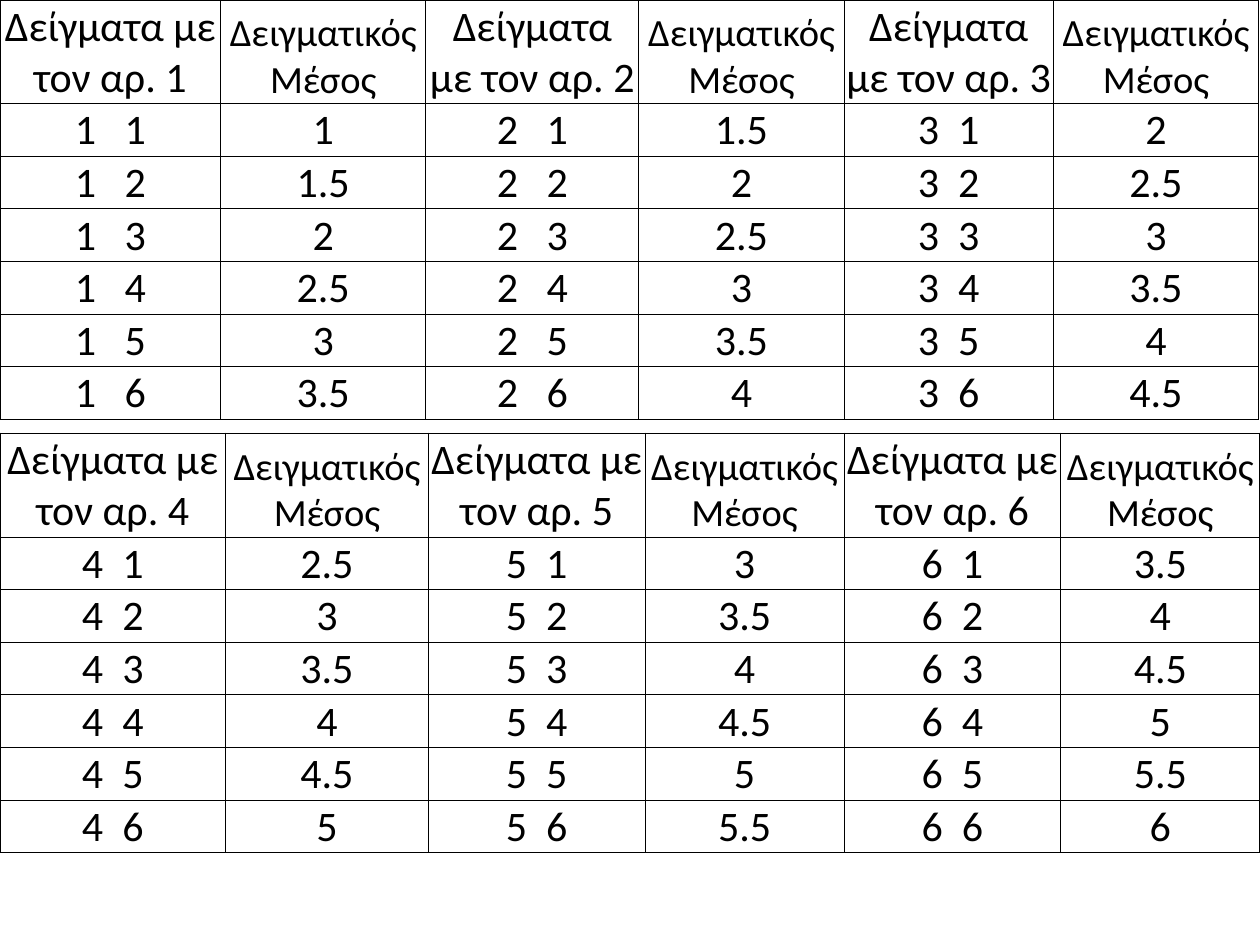
from lxml import etree
from pptx import Presentation
from pptx.dml.color import RGBColor
from pptx.enum import text
from pptx.oxml import ns
from pptx.util import Inches, Pt

FONT = "Calibri"
BLACK = "000000"
FACES = range(1, 7)
HEADER_HEIGHT, ROW_HEIGHT = 0.82, 0.41
THIN, THICK = 0.5, 1


def color(value):
    return RGBColor.from_string(value)


def set_borders(cell, widths):
    """Draw the cell's borders; widths maps L, R, T and B to points."""
    properties = cell._tc.get_or_add_tcPr()
    for side in "LRTB":
        line = etree.SubElement(properties, ns.qn(f"a:ln{side}"), w=str(Pt(widths[side])))
        fill = etree.SubElement(line, ns.qn("a:solidFill"))
        etree.SubElement(fill, ns.qn("a:srgbClr"), val=BLACK)


def fill_cell(cell, content, size):
    cell.margin_left = cell.margin_right = cell.margin_top = Inches(0.01)
    cell.margin_bottom = 0
    cell.vertical_anchor = text.MSO_ANCHOR.BOTTOM
    cell.text_frame.text = content
    para = cell.text_frame.paragraphs[0]
    para.alignment = text.PP_ALIGN.CENTER
    font = para.runs[0].font
    font.name, font.size = FONT, Pt(size)
    font.color.rgb = color(BLACK)


def sample_rows(first_draws):
    """Return the header and one row per second draw, with each sample's mean."""
    header = []
    for first in first_draws:
        header += [f"Δείγματα με τον αρ. {first}", "Δειγματικός Μέσος"]
    rows = [header]
    for second in FACES:
        row = []
        for first in first_draws:
            gap = "   " if first < 3 else "  "
            row += [f"{first}{gap}{second}", f"{(first + second) / 2:g}"]
        rows.append(row)
    return rows


def add_sample_table(page, top, first_draws, column_widths):
    rows = sample_rows(first_draws)
    last_row, last_column = len(rows) - 1, len(column_widths) - 1
    height = HEADER_HEIGHT + ROW_HEIGHT * last_row
    table = page.shapes.add_table(
        len(rows), len(column_widths), 0, Inches(top), Inches(10), Inches(height)
    ).table
    table.first_row = table.horz_banding = False
    for column, width in zip(table.columns, column_widths):
        column.width = Inches(width)
    for r, row in enumerate(rows):
        table.rows[r].height = Inches(ROW_HEIGHT if r else HEADER_HEIGHT)
        inner_row = 0 < r < last_row
        for c, content in enumerate(row):
            cell = table.cell(r, c)
            is_mean_header = r == 0 and c % 2 == 1
            fill_cell(cell, content, 22 if is_mean_header else 24)
            set_borders(cell, {
                "L": THICK if inner_row and c == 0 else THIN,
                "R": THICK if inner_row and c == last_column else THIN,
                "T": THIN if r else THICK,
                "B": THIN,
            })
            cell.fill.background()


def main():
    deck = Presentation()
    deck.slide_width, deck.slide_height = Inches(10), Inches(7.5)
    page = deck.slides.add_slide(deck.slide_layouts[6])
    add_sample_table(page, 0, (1, 2, 3), (1.75, 1.63, 1.69, 1.63, 1.66, 1.63))
    add_sample_table(page, 3.44, (4, 5, 6), (1.79, 1.61, 1.72, 1.58, 1.72, 1.58))
    deck.save("out.pptx")


if __name__ == "__main__":
    main()
